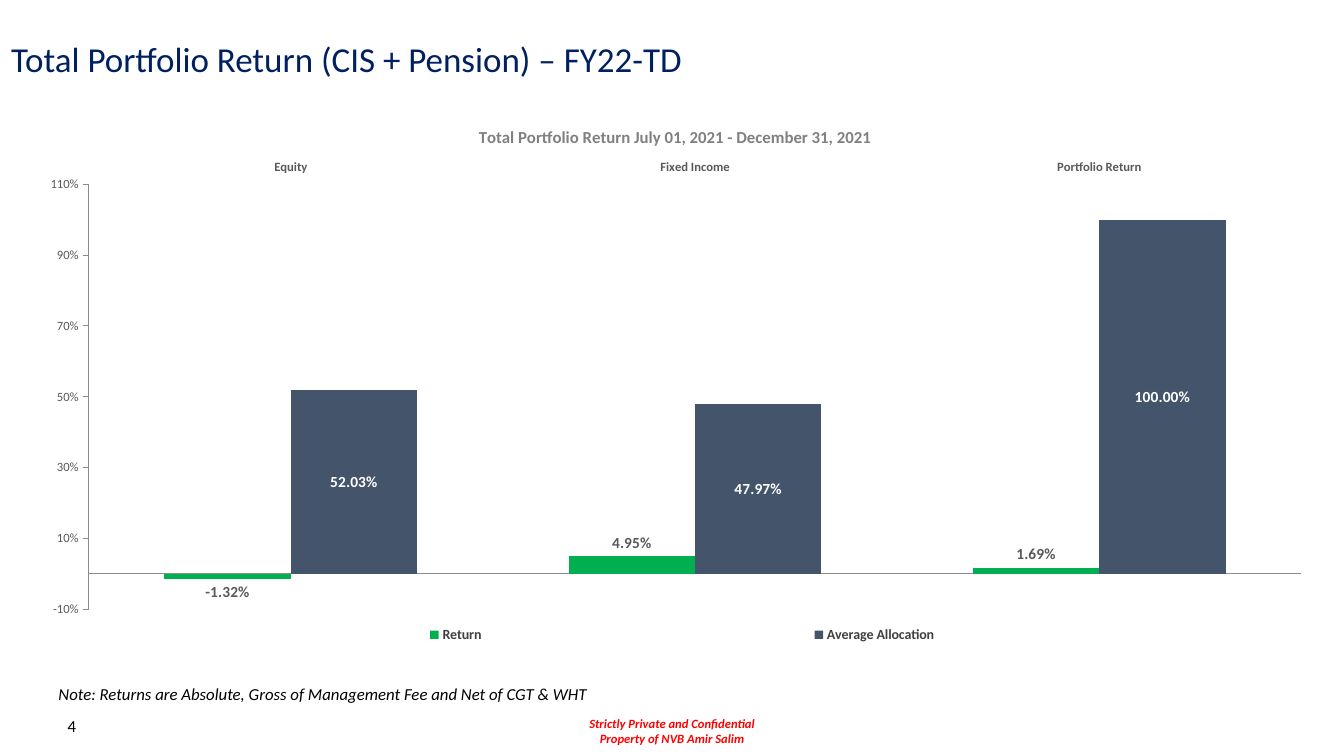
from dataclasses import dataclass

from pptx import Presentation
from pptx import util as u
from pptx.chart.data import CategoryChartData
from pptx.dml.color import RGBColor
from pptx.enum import chart as ch
from pptx.enum import text
from pptx.oxml import parse_xml
from pptx.oxml.ns import nsdecls


@dataclass(frozen=True)
class Theme:
    font: str = "Calibri"
    navy: str = "002060"
    black: str = "000000"
    red: str = "FF0000"
    green: str = "00B050"
    slate: str = "44546A"
    white: str = "FFFFFF"
    title_gray: str = "808080"
    label_gray: str = "595959"
    legend_gray: str = "404040"
    axis_gray: str = "8C8C8C"
    heading: float = 25
    body: float = 12
    data: float = 11
    legend: float = 10
    small: float = 9


THEME = Theme()
WIDTH, HEIGHT = 13.33, 7.5


def style(font, size, color, bold=False, italic=False):
    font.name = THEME.font
    font.size = u.Pt(size)
    font.color.rgb = RGBColor.from_string(color)
    font.bold = bold
    font.italic = italic


def area(left, top, width, height):
    """Turn shares of the slide's size into lengths."""
    return (u.Inches(left * WIDTH), u.Inches(top * HEIGHT),
            u.Inches(width * WIDTH), u.Inches(height * HEIGHT))


def add_text(slide, place, lines, size, color, align=text.PP_ALIGN.LEFT,
             anchor=text.MSO_ANCHOR.MIDDLE, wrap=True, **emphasis):
    box = slide.shapes.add_textbox(*area(*place))
    frame = box.text_frame
    frame.word_wrap = wrap
    frame.vertical_anchor = anchor
    for index, line in enumerate(lines):
        para = frame.paragraphs[0] if index == 0 else frame.add_paragraph()
        para.alignment = align
        span = para.add_run()
        span.text = line
        style(span.font, size, color, **emphasis)


def add_note(slide, place, note):
    table = slide.shapes.add_table(1, 1, *area(*place)).table
    table.first_row = table.horz_banding = False
    cell = table.cell(0, 0)
    cell.fill.background()
    cell.margin_left = cell.margin_right = cell.margin_top = cell.margin_bottom = 0
    cell.vertical_anchor = text.MSO_ANCHOR.BOTTOM
    span = cell.text_frame.paragraphs[0].add_run()
    span.text = note
    style(span.font, THEME.body, THEME.black, italic=True)


def set_layout(chart, part, index, **shares):
    """Fix a chart part in place; index is where its layout element belongs."""
    element = chart.element.xpath(f".//c:{part}")[0]
    for old in element.xpath("./c:layout"):
        element.remove(old)
    target = '<c:layoutTarget val="inner"/>' if part == "plotArea" else ""
    modes = "".join(f'<c:{key}Mode val="edge"/>' for key in "xy")
    values = "".join(f'<c:{key} val="{share}"/>' for key, share in shares.items())
    element.insert(index, parse_xml(
        f'<c:layout {nsdecls("c")}><c:manualLayout>{target}{modes}{values}'
        "</c:manualLayout></c:layout>"))


def style_axis(axis, labels, tick, bold=False):
    axis.has_major_gridlines = False
    axis.major_tick_mark = tick
    axis.minor_tick_mark = ch.XL_TICK_MARK.NONE
    axis.tick_label_position = labels
    axis.format.line.color.rgb = RGBColor.from_string(THEME.axis_gray)
    axis.format.line.width = u.Pt(0.75)
    style(axis.tick_labels.font, THEME.small, THEME.label_gray, bold=bold)


def style_series(series, fill, label_color, label_position):
    series.format.fill.solid()
    series.format.fill.fore_color.rgb = RGBColor.from_string(fill)
    series.invert_if_negative = False
    labels = series.data_labels
    labels.show_value = True
    labels.number_format = "0.00%"
    labels.number_format_is_linked = False
    labels.position = label_position
    style(labels.font, THEME.data, label_color, bold=True)


def add_return_chart(slide, place):
    data = CategoryChartData(number_format="0.00%")
    data.categories = ["Equity", "Fixed Income", "Portfolio Return"]
    data.add_series("Return", [-0.0132, 0.0495, 0.0169])
    data.add_series("Average Allocation", [0.5203, 0.4797, 1])
    chart = slide.shapes.add_chart(
        ch.XL_CHART_TYPE.COLUMN_CLUSTERED, *area(*place), data).chart
    style(chart.font, THEME.legend, THEME.black)

    chart.has_title = True
    span = chart.chart_title.text_frame.paragraphs[0].add_run()
    span.text = "Total Portfolio Return July 01, 2021 - December 31, 2021"
    style(span.font, THEME.body, THEME.title_gray, bold=True)

    chart.has_legend = True
    chart.legend.position = ch.XL_LEGEND_POSITION.BOTTOM
    chart.legend.include_in_layout = False
    style(chart.legend.font, THEME.legend, THEME.legend_gray, bold=True)

    style_axis(chart.category_axis, ch.XL_TICK_LABEL_POSITION.HIGH,
               ch.XL_TICK_MARK.NONE, bold=True)
    values = chart.value_axis
    style_axis(values, ch.XL_TICK_LABEL_POSITION.LOW, ch.XL_TICK_MARK.OUTSIDE)
    values.minimum_scale, values.maximum_scale, values.major_unit = -0.1, 1.1, 0.2
    values.tick_labels.number_format = "0%"
    values.tick_labels.number_format_is_linked = False

    plot = chart.plots[0]
    plot.vary_by_categories = False
    plot.gap_width = 120
    plot.overlap = 0
    returns, allocation = plot.series
    style_series(returns, THEME.green, THEME.label_gray,
                 ch.XL_LABEL_POSITION.OUTSIDE_END)
    style_series(allocation, THEME.slate, THEME.white, ch.XL_LABEL_POSITION.CENTER)

    set_layout(chart, "title", 1, x=0.35, y=0.04)
    set_layout(chart, "plotArea", 0, x=0.05, y=0.15, w=0.94, h=0.755)
    set_layout(chart, "legend", 1, x=0.06, y=0.92, w=0.9, h=0.06)


def main():
    deck = Presentation()
    deck.slide_width, deck.slide_height = u.Inches(WIDTH), u.Inches(HEIGHT)
    slide = deck.slides.add_slide(deck.slide_layouts[6])

    add_text(slide, (0.43, 0.94, 0.14, 0.053),
             ["Strictly Private and Confidential", "Property of NVB Amir Salim"],
             THEME.small, THEME.red, text.PP_ALIGN.CENTER, text.MSO_ANCHOR.TOP,
             wrap=False, bold=True, italic=True)
    add_text(slide, (0.018, 0.933, 0.046, 0.053), ["4"],
             THEME.body, THEME.black, text.PP_ALIGN.RIGHT)
    add_text(slide, (0.001, 0.037, 0.75, 0.08),
             ["Total Portfolio Return (CIS + Pension) – FY22-TD"],
             THEME.heading, THEME.navy)
    add_note(slide, (0.0435, 0.9, 0.407, 0.033),
             "Note: Returns are Absolute, Gross of Management Fee and Net of CGT & WHT")
    add_return_chart(slide, (0.018, 0.132, 0.96, 0.745))

    deck.save("out.pptx")


if __name__ == "__main__":
    main()
